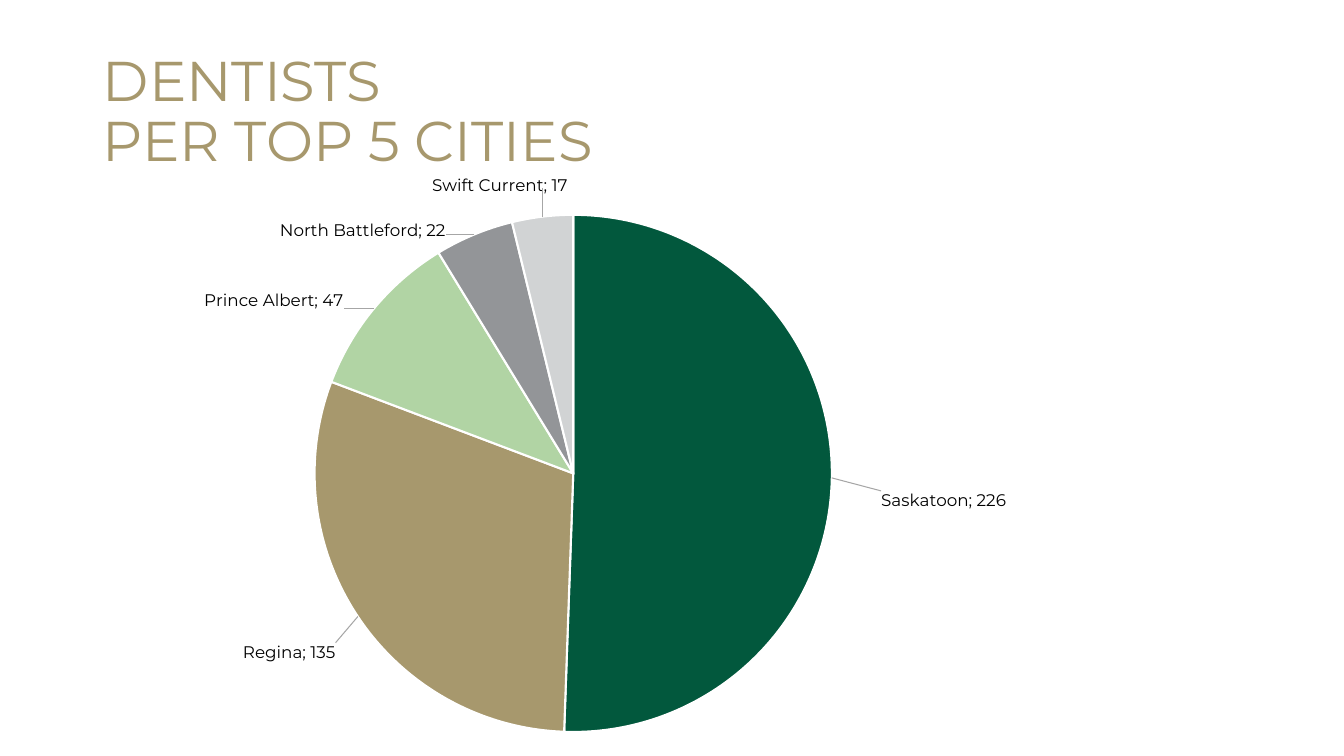
from typing import NamedTuple

from lxml.etree import SubElement
from pptx import Presentation
from pptx.chart.chart import Chart
from pptx.chart.data import CategoryChartData
from pptx.dml.color import RGBColor
from pptx.enum.chart import XL_CHART_TYPE, XL_LABEL_POSITION
from pptx.enum.text import MSO_ANCHOR, PP_ALIGN
from pptx.oxml import parse_xml
from pptx.oxml.ns import nsdecls, qn
from pptx.slide import Slide
from pptx.util import Inches, Pt

FONT = "Montserrat"
COLORS = {
    "green": "02583D",
    "gold": "A7986D",
    "light green": "B1D4A4",
    "gray": "939598",
    "light gray": "D1D3D4",
    "white": "FFFFFF",
    "black": "000000",
    "leader": "A6A6A6",
}


class City(NamedTuple):
    name: str
    dentists: int
    color: str
    label_shift: tuple[float, float]  # fractions of the chart size


CITIES = [
    City("Saskatoon", 226, "green", (0.05, 0.04)),
    City("Regina", 135, "gold", (-0.02, 0.04)),
    City("Prince Albert", 47, "light green", (-0.03, 0.01)),
    City("North Battleford", 22, "gray", (-0.03, 0.02)),
    City("Swift Current", 17, "light gray", (0.03, -0.04)),
]


def rgb(name: str) -> RGBColor:
    return RGBColor.from_string(COLORS[name])


def format_font(font, size: float, color: str) -> None:
    for key, value in {"name": FONT, "size": Pt(size), "bold": False}.items():
        setattr(font, key, value)
    font.color.rgb = rgb(color)


def manual_layout(**settings):
    layout = parse_xml(f"<c:layout {nsdecls('c')}><c:manualLayout/></c:layout>")
    for key, value in settings.items():
        SubElement(layout[0], qn(f"c:{key}")).set("val", str(value))
    return layout


def show_category(labels) -> None:
    labels.find(qn("c:showCatName")).set("val", "1")
    separator = parse_xml(f"<c:separator {nsdecls('c')}>; </c:separator>")
    labels.find(qn("c:showBubbleSize")).addnext(separator)


def add_title(page: Slide) -> None:
    box = page.shapes.title
    place = {"left": 0.92, "top": 0.4, "width": 11.5, "height": 1.45}
    for key, value in place.items():
        setattr(box, key, Inches(value))
    frame = box.text_frame
    frame.word_wrap = True
    frame.vertical_anchor = MSO_ANCHOR.MIDDLE
    para = frame.paragraphs[0]
    para.text = "DENTISTS\vPER TOP 5 CITIES"
    para.alignment = PP_ALIGN.LEFT
    para.line_spacing = 0.9
    for span in para.runs:
        format_font(span.font, 40, "gold")


def add_pie(page: Slide) -> Chart:
    data = CategoryChartData()
    data.categories = [city.name for city in CITIES]
    data.add_series("Series 1", [city.dentists for city in CITIES])
    chart = page.shapes.add_chart(
        XL_CHART_TYPE.PIE, Inches(1.45), Inches(1.74), Inches(8.61), Inches(5.67), data
    ).chart
    chart.has_title = False
    chart.has_legend = False
    format_font(chart.font, 10, "black")
    chart.plots[0].vary_by_categories = True

    # Place the circle inside the chart
    plot_area = chart.element.find(".//" + qn("c:plotArea"))
    for layout in plot_area.findall(qn("c:layout")):
        plot_area.remove(layout)
    plot_area.insert(0, manual_layout(
        layoutTarget="inner", xMode="edge", yMode="edge", x=0.194, y=0.069, w=0.596, h=0.905
    ))
    return chart


def format_slices(chart: Chart) -> None:
    series = chart.plots[0].series[0]
    labels = series.data_labels
    labels.show_value = True
    labels.position = XL_LABEL_POSITION.OUTSIDE_END
    format_font(labels.font, 12, "black")
    for index, city in enumerate(CITIES):
        point = series.points[index]
        point.format.fill.solid()
        point.format.fill.fore_color.rgb = rgb(city.color)
        point.format.line.color.rgb = rgb("white")
        point.format.line.width = Pt(1.5)
        format_font(point.data_label.font, 12, "black")
        point.data_label.position = XL_LABEL_POSITION.OUTSIDE_END

    # Shift each label away from its slice
    slice_labels = chart.element.findall(".//" + qn("c:dLbl"))
    for city, label in zip(CITIES, slice_labels):
        x, y = city.label_shift
        label.find(qn("c:idx")).addnext(manual_layout(x=x, y=y))
        show_category(label)

    # Leader lines
    group = chart.element.find(".//" + qn("c:ser") + "/" + qn("c:dLbls"))
    show_category(group)
    for old in group.findall(qn("c:showLeaderLines")):
        group.remove(old)
    SubElement(group, qn("c:showLeaderLines")).set("val", "1")
    group.append(parse_xml(
        f"<c:leaderLines {nsdecls('c', 'a')}><c:spPr><a:ln w='9525'><a:solidFill>"
        f"<a:srgbClr val='{COLORS['leader']}'/></a:solidFill></a:ln></c:spPr></c:leaderLines>"
    ))


def main() -> None:
    deck = Presentation()
    deck.slide_width = Inches(13.33)
    deck.slide_height = Inches(7.5)
    page = deck.slides.add_slide(deck.slide_layouts[5])
    add_title(page)
    format_slices(add_pie(page))
    deck.save("out.pptx")


if __name__ == "__main__":
    main()
